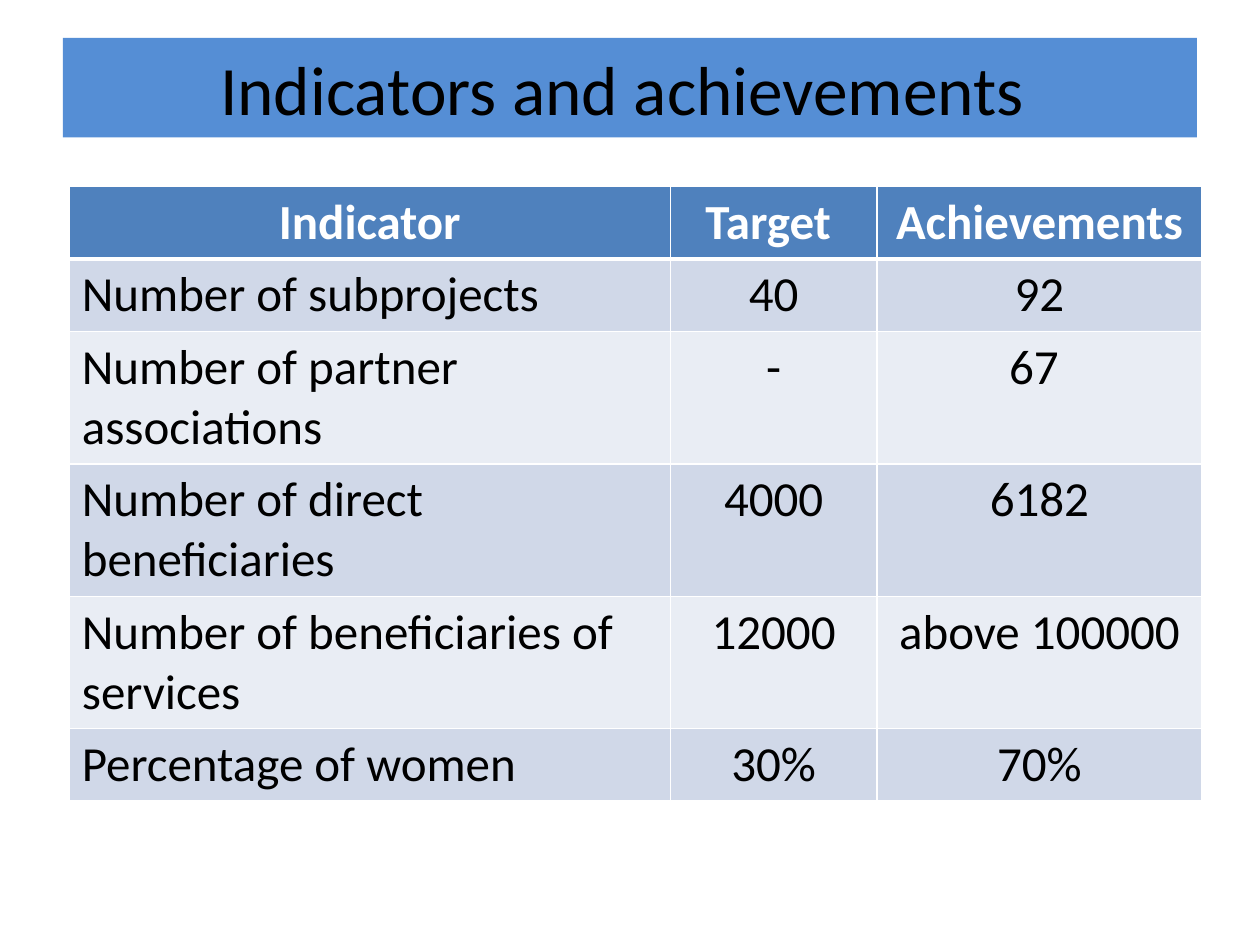
from pptx import Presentation
from pptx import util as u
from pptx.dml import color
from pptx.enum import shapes, text
from pptx.oxml import parse_xml
from pptx.oxml import ns

BLACK = color.RGBColor(0x00, 0x00, 0x00)
WHITE = color.RGBColor(0xFF, 0xFF, 0xFF)
TITLE_BLUE = color.RGBColor(0x55, 0x8E, 0xD5)
HEADER_BLUE = color.RGBColor(0x4F, 0x81, 0xBD)
BANDS = (color.RGBColor(0xD0, 0xD8, 0xE8), color.RGBColor(0xE9, 0xED, 0xF4))

COLUMN_WIDTHS = (4.77, 1.64, 2.58)
SINGLE, DOUBLE = 0.57, 1.05
ROWS = (
    (SINGLE, ("Indicator", "Target ", "Achievements")),
    (SINGLE, ("Number of subprojects", "40", "92")),
    (DOUBLE, ("Number of partner associations", "-", "67 ")),
    (DOUBLE, ("Number of direct beneficiaries", "4000", "6182")),
    (DOUBLE, ("Number of beneficiaries of services", "12000", "above 100000")),
    (SINGLE, ("Percentage of women", "30%", "70%")),
)


class SlideBuilder:
    """Hold the text style and current slide, and add each kind of element."""

    font_name = "Calibri"

    def __init__(self, slide):
        self.slide = slide

    def add_text(self, frame, content, font_color, alignment, **formats):
        paragraph = frame.paragraphs[0]
        paragraph.alignment = alignment
        run = paragraph.add_run()
        run.text = content
        for name, value in {"name": self.font_name, **formats}.items():
            setattr(run.font, name, value)
        run.font.color.rgb = font_color

    def add_title(self, content, left, top, width, height):
        shape = self.slide.shapes.add_shape(
            shapes.MSO_SHAPE.RECTANGLE, *map(u.Inches, (left, top, width, height)))
        shape.shadow.inherit = False
        shape.fill.solid()
        shape.fill.fore_color.rgb = TITLE_BLUE
        shape.line.fill.background()
        shape.text_frame.word_wrap = True
        shape.text_frame.vertical_anchor = text.MSO_ANCHOR.MIDDLE
        self.add_text(shape.text_frame, content, BLACK, text.PP_ALIGN.CENTER,
                      size=u.Pt(39.6))

    def add_borders(self, cell, widths):
        properties = cell._tc.get_or_add_tcPr()
        for side, width in widths.items():
            properties.append(parse_xml(
                f'<a:ln{side} {ns.nsdecls("a")} w="{u.Pt(width)}"><a:solidFill>'
                f'<a:srgbClr val="{WHITE}"/></a:solidFill></a:ln{side}>'))

    def add_table(self, rows, column_widths, left, top):
        height = sum(row_height for row_height, _ in rows)
        table = self.slide.shapes.add_table(
            len(rows), len(column_widths),
            *map(u.Inches, (left, top, sum(column_widths), height))).table
        for column, width in zip(table.columns, column_widths):
            column.width = u.Inches(width)
        for row_index, (row_height, contents) in enumerate(rows):
            table.rows[row_index].height = u.Inches(row_height)
            header = row_index == 0
            for column_index, content in enumerate(contents):
                cell = table.cell(row_index, column_index)
                self.add_borders(cell, {"L": 1, "R": 1, "T": 3 if row_index == 1 else 1,
                                        "B": 3 if header else 1})
                cell.fill.solid()
                cell.fill.fore_color.rgb = (
                    HEADER_BLUE if header else BANDS[(row_index - 1) % 2])
                centered = header or column_index > 0
                self.add_text(
                    cell.text_frame, content, WHITE if header else BLACK,
                    text.PP_ALIGN.CENTER if centered else text.PP_ALIGN.LEFT,
                    size=u.Pt(28), bold=header)


def main():
    presentation = Presentation()
    presentation.slide_width = u.Inches(10)
    presentation.slide_height = u.Inches(7.5)
    builder = SlideBuilder(presentation.slides.add_slide(presentation.slide_layouts[6]))
    builder.add_title("Indicators and achievements ", 0.5, 0.3, 9, 0.79)
    builder.add_table(ROWS, COLUMN_WIDTHS, 0.55, 1.48)
    presentation.save("out.pptx")


if __name__ == "__main__":
    main()
